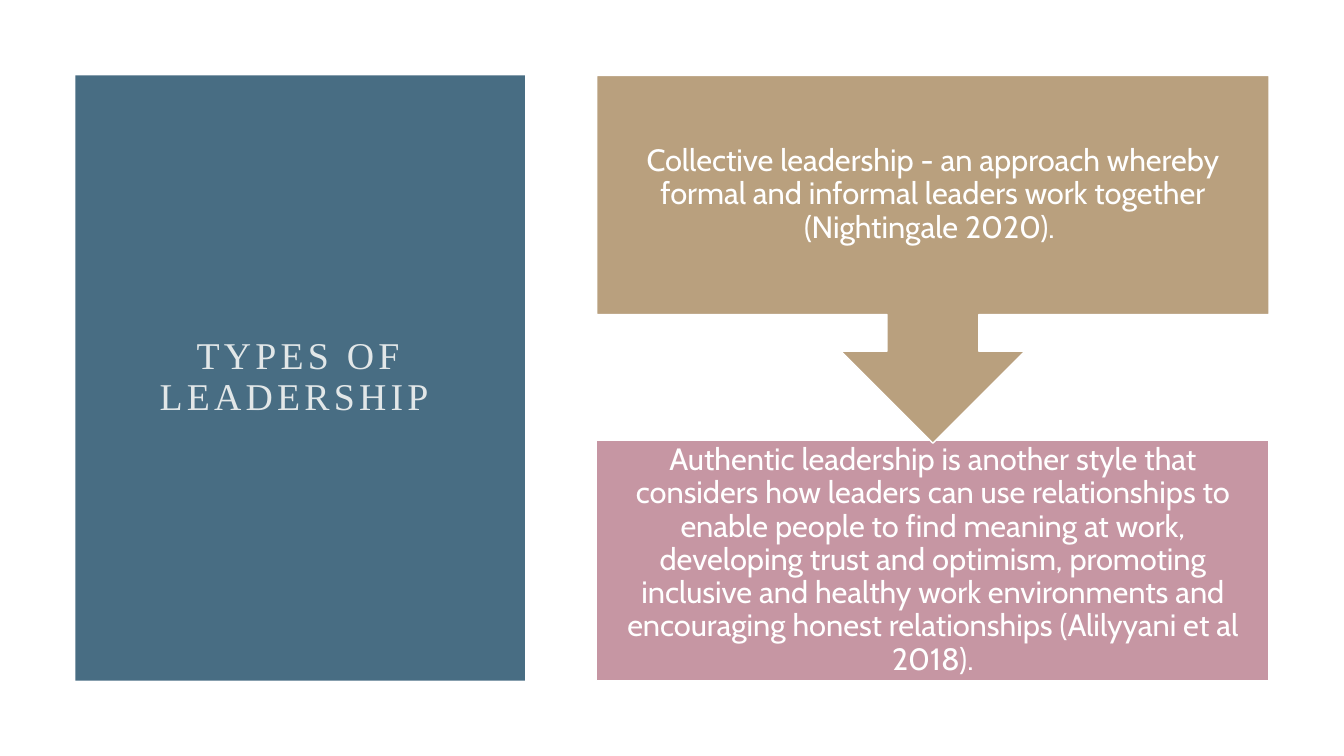
import pptx
import pptx.util
import pptx.dml.color
import pptx.enum.shapes
import pptx.enum.text

Cm, Pt = pptx.util.Cm, pptx.util.Pt
KIND = pptx.enum.shapes.MSO_SHAPE
TEXT = pptx.enum.text

TITLE = "TYPES OF LEADERSHIP "
STEPS = [
    ("Collective leadership - an approach whereby formal and informal "
     "leaders work together (Nightingale 2020). "),
    ("Authentic leadership is another style that considers how leaders can "
     "use relationships to enable people to find meaning at work, developing "
     "trust and optimism, promoting inclusive and healthy work environments "
     "and encouraging honest relationships (Alilyyani et al 2018)."),
]
COLORS = {"panel": "486D83", "title": "E2E7E8", "first": "B9A07E",
          "second": "C696A3", "white": "FFFFFF"}

WIDE, HIGH = 33.87, 19.05
EDGE = 1.9
PANEL = 11.33          # width of the title panel
INSET = 1.9            # from the panel to the title
LEFT, FLOW = 15.04, 16.94
CALL, BOX = 9.27, 6.05  # heights of the arrow callout and the last box
BODY = 0.65            # share of the callout above its arrow


def color(name):
    return pptx.dml.color.RGBColor.from_string(COLORS[name])


def block(slide, kind, place, fill, line=None):
    """Add a flat shape at place, given in centimetres."""
    shape = slide.shapes.add_shape(kind, *map(Cm, place))
    shape.shadow.inherit = False
    shape.fill.solid()
    shape.fill.fore_color.rgb = color(fill)
    if line:
        shape.line.color.rgb = color(line)
        shape.line.width = Pt(1)
    else:
        shape.line.fill.background()
    return shape


def write(shape, text, font, size, tint, pad):
    """Set centred text and return its run."""
    frame = shape.text_frame
    frame.text = text
    frame.word_wrap = True
    frame.auto_size = TEXT.MSO_AUTO_SIZE.NONE
    frame.vertical_anchor = TEXT.MSO_ANCHOR.MIDDLE
    frame.margin_left = frame.margin_right = Cm(pad)
    frame.margin_top = frame.margin_bottom = Cm(pad)
    para = frame.paragraphs[0]
    para.alignment = TEXT.PP_ALIGN.CENTER
    para.line_spacing = 0.9
    run = para.runs[0]
    run.font.name = font
    run.font.size = Pt(size)
    run.font.color.rgb = color(tint)
    return run


def main():
    deck = pptx.Presentation()
    deck.slide_width, deck.slide_height = Cm(WIDE), Cm(HIGH)
    slide = deck.slides.add_slide(deck.slide_layouts[5])

    tall = HIGH - 2 * EDGE
    panel = block(slide, KIND.RECTANGLE, (EDGE, EDGE, PANEL, tall), "panel")
    title = slide.shapes.title
    title.left = title.top = Cm(EDGE + INSET)
    title.width = Cm(PANEL - 2 * INSET)
    title.height = Cm(tall - 2 * INSET)
    run = write(title, TITLE, "Times New Roman", 27, "title", 0.2)
    run.font._element.set("spc", "300")
    title._element.addprevious(panel._element)

    low = HIGH - EDGE - BOX
    last = block(slide, KIND.RECTANGLE, (LEFT, low, FLOW, BOX),
                 "second", "white")
    call = block(slide, KIND.DOWN_ARROW_CALLOUT, (LEFT, EDGE, FLOW, CALL),
                 "first", "white")
    call.adjustments[3] = BODY
    for shape, text in zip((call, last), STEPS):
        write(shape, text, "Cabin", 22, "white", 0.43)

    deck.save("out.pptx")


if __name__ == "__main__":
    main()
